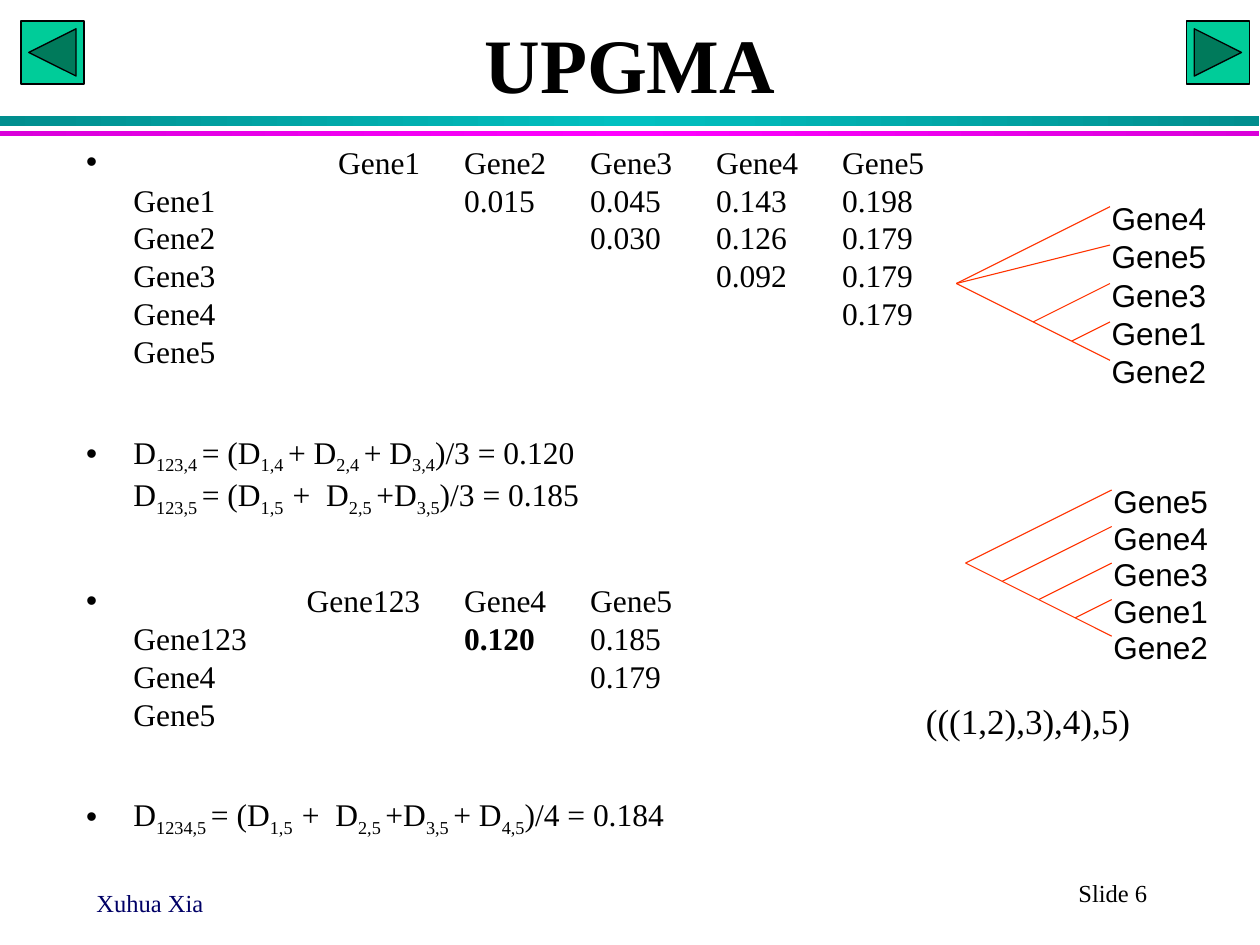
"""Build the UPGMA slide with distance tables, averages and two gene trees."""
import copy

import lxml.etree
import pptx
import pptx.dml.color
import pptx.enum.shapes
import pptx.enum.text
import pptx.oxml.ns
import pptx.util

Pt = pptx.util.Pt
qn = pptx.oxml.ns.qn
SHAPES = pptx.enum.shapes.MSO_SHAPE
ALIGN = pptx.enum.text.PP_ALIGN

THEME = {
    "black": "000000", "navy": "000066", "branch": "FF3300", "button": "00CC99",
    "teal": ("008E8E", "00C0C0", "008E8E"),
    "magenta": ("DA00DA", "FF00FF", "DA00DA"),
    "serif": "Times New Roman", "sans": "Arial",
    "title": 44, "newick": 20, "text": 18, "footer": 14,
    "branch_width": 0.63, "button_line": 0.75,
}
TABLE = {"line": 21.6, "emphasis": {"b": "1"}}
FORMULA = {"line": 24.5, "emphasis": {"baseline": "-25000"}}
MERGED_TABLE = {**TABLE, "tabs": (("r", 191), ("l", 216), ("l", 288))}

BODY = [
    (TABLE, "\t\tGene1\tGene2\tGene3\tGene4\tGene5\n"
            "Gene1\t\t0.015\t0.045\t0.143\t0.198\n"
            "Gene2\t\t\t0.030\t0.126\t0.179\n"
            "Gene3\t\t\t\t0.092\t0.179\n"
            "Gene4\t\t\t\t\t0.179\n"
            "Gene5"),
    (FORMULA, "D|123,4 |= (D|1,4 |+ D|2,4 |+ D|3,4|)/3 = 0.120\n"
              "D|123,5 |= (D|1,5  |+  D|2,5 |+D|3,5|)/3 = 0.185"),
    (MERGED_TABLE, "\tGene123\tGene4\tGene5\n"
                   "Gene123\t\t|0.120|\t0.185\n"
                   "Gene4\t\t\t0.179\n"
                   "Gene5"),
    (FORMULA, "D|1234,5 |= (D|1,5  |+  D|2,5 |+D|3,5 |+ D|4,5|)/4 = 0.184"),
]
TREES = [
    {"tips": ("Gene4", "Gene5", "Gene3", "Gene1", "Gene2"),
     "joins": (0, 0, 2, 3), "x": 634.3, "y": 118.1, "pitch": 21.95},
    {"tips": ("Gene5", "Gene4", "Gene3", "Gene1", "Gene2"),
     "joins": (0, 1, 2, 3), "x": 635.3, "y": 280, "pitch": 20.88},
]
BARS = [("teal", 66.3, 5.9), ("magenta", 74.8, 3)]
BUTTONS = [(SHAPES.ACTION_BUTTON_BACK_OR_PREVIOUS, 12),
           (SHAPES.ACTION_BUTTON_FORWARD_OR_NEXT, 678)]
CAPTIONS = [
    ("Xuhua Xia", (48, 504, 150, 18), "footer", "navy", ALIGN.LEFT),
    ("Slide 6", (564, 498, 144, 24), "footer", "black", ALIGN.CENTER),
    ("(((1,2),3),4),5)", (522, 396, 174, 31), "newick", "black", ALIGN.LEFT),
]


def rgb(value):
    """Turn a hex string into a colour."""
    return pptx.dml.color.RGBColor.from_string(value)


def add_span(para, text, size="text", face="serif", color="black", bold=False):
    """Append a formatted run to a paragraph."""
    span = para.add_run()
    span.text = text
    formats = {"size": Pt(THEME[size]), "name": THEME[face], "bold": bold}
    for name, value in formats.items():
        setattr(span.font, name, value)
    span.font.color.rgb = rgb(THEME[color])
    return span


def place(shape, *position):
    """Move a shape to left, top, width and height."""
    for name, value in zip(("left", "top", "width", "height"), position):
        setattr(shape, name, Pt(value))


def add_text(page, text, position, wrap=True, margin=None, align=ALIGN.LEFT, **formats):
    """Add a text box holding one line."""
    box = page.shapes.add_textbox(*map(Pt, position))
    frame = box.text_frame
    frame.word_wrap = wrap
    if margin is not None:
        for side in ("left", "right", "top", "bottom"):
            setattr(frame, f"margin_{side}", Pt(margin))
    frame.paragraphs[0].alignment = align
    add_span(frame.paragraphs[0], text, **formats)


def add_bar(page, colors, top, height):
    """Add a full-width bar with a three-stop gradient."""
    bar = page.shapes.add_shape(SHAPES.RECTANGLE, 0, Pt(top), Pt(719.5), Pt(height))
    bar.shadow.inherit = False
    bar.line.fill.background()
    bar.fill.gradient()
    bar.fill.gradient_angle = 0
    stops = bar._element.spPr.find(".//" + qn("a:gsLst"))
    stops.append(copy.deepcopy(stops[0]))
    for index, (stop, color) in enumerate(zip(bar.fill.gradient_stops, colors)):
        stop.position = index / 2
        stop.color.rgb = rgb(color)


def add_button(page, kind, left):
    """Add a navigation button."""
    button = page.shapes.add_shape(kind, Pt(left), Pt(12), Pt(36), Pt(36))
    button.shadow.inherit = False
    button.fill.solid()
    button.fill.fore_color.rgb = rgb(THEME["button"])
    button.line.color.rgb = rgb(THEME["black"])
    button.line.width = Pt(THEME["button_line"])


def add_branch(page, start, end):
    """Add one tree branch."""
    branch = page.shapes.add_connector(
        pptx.enum.shapes.MSO_CONNECTOR.STRAIGHT, *map(Pt, start + end))
    branch.line.color.rgb = rgb(THEME["branch"])
    branch.line.width = Pt(THEME["branch_width"])
    lxml.etree.SubElement(branch._element.spPr, qn("a:effectLst"))


def add_tree(page, tree):
    """Draw tips joined to a backbone that ends at the last tip."""
    x, heights = tree["x"], [tree["y"] + i * tree["pitch"] for i in range(len(tree["tips"]))]
    last = heights[-1]
    nodes = {i: (x - (last - heights[i]), (last + heights[i]) / 2) for i in tree["joins"]}
    for height, join in zip(heights, tree["joins"]):
        add_branch(page, (x, height), nodes[join])
    backbone = [nodes[i] for i in sorted(nodes)] + [(x, last)]
    for start, end in zip(backbone, backbone[1:]):
        add_branch(page, start, end)
    for name, height in zip(tree["tips"], heights):
        add_text(page, name, (x + 1, height - 4.5, 54.7, 21.6),
                 wrap=False, margin=0, face="sans")


def fill_body(frame):
    """Write the bulleted tables and formulas."""
    frame.auto_size = pptx.enum.text.MSO_AUTO_SIZE.NONE
    for index, (style, text) in enumerate(BODY):
        para = frame.add_paragraph() if index else frame.paragraphs[0]
        formats = {"line_spacing": Pt(style["line"]), "space_before": Pt(36 if index else 0)}
        for name, value in formats.items():
            setattr(para, name, value)
        properties = para._p.get_or_add_pPr()
        for name, value in {"marL": 27, "indent": -27, "defTabSz": 72}.items():
            properties.set(name, str(Pt(value)))
        if "tabs" in style:
            stops = lxml.etree.SubElement(properties, qn("a:tabLst"))
            for align, position in style["tabs"]:
                lxml.etree.SubElement(stops, qn("a:tab"), pos=str(Pt(position)), algn=align)
        for number, piece in enumerate(text.split("|")):
            for row, line in enumerate(piece.split("\n")):
                if row:
                    para.add_line_break()
                    para._p[-1].append(copy.deepcopy(para.runs[-1]._r.rPr))
                span = add_span(para, line)
                if number % 2:
                    for name, value in style["emphasis"].items():
                        span._r.rPr.set(name, value)


def main():
    """Assemble and save the deck."""
    deck = pptx.Presentation()
    deck.slide_width, deck.slide_height = Pt(720), Pt(540)
    page = deck.slides.add_slide(deck.slide_layouts[1])
    title, body = page.shapes.title, page.placeholders[1]
    for bar in BARS:
        add_bar(page, THEME[bar[0]], *bar[1:])
    for button in BUTTONS:
        add_button(page, *button)
    place(title, 54, 0, 612, 72)
    title.text_frame.vertical_anchor = pptx.enum.text.MSO_ANCHOR.MIDDLE
    heading = title.text_frame.paragraphs[0]
    heading.alignment = ALIGN.CENTER
    add_span(heading, "UPGMA", size="title", bold=True)
    place(body, 42, 78, 642, 402)
    fill_body(body.text_frame)
    for tree in TREES:
        add_tree(page, tree)
    for text, position, size, color, align in CAPTIONS:
        add_text(page, text, position, size=size, color=color, align=align)
    deck.save("out.pptx")


if __name__ == "__main__":
    main()
